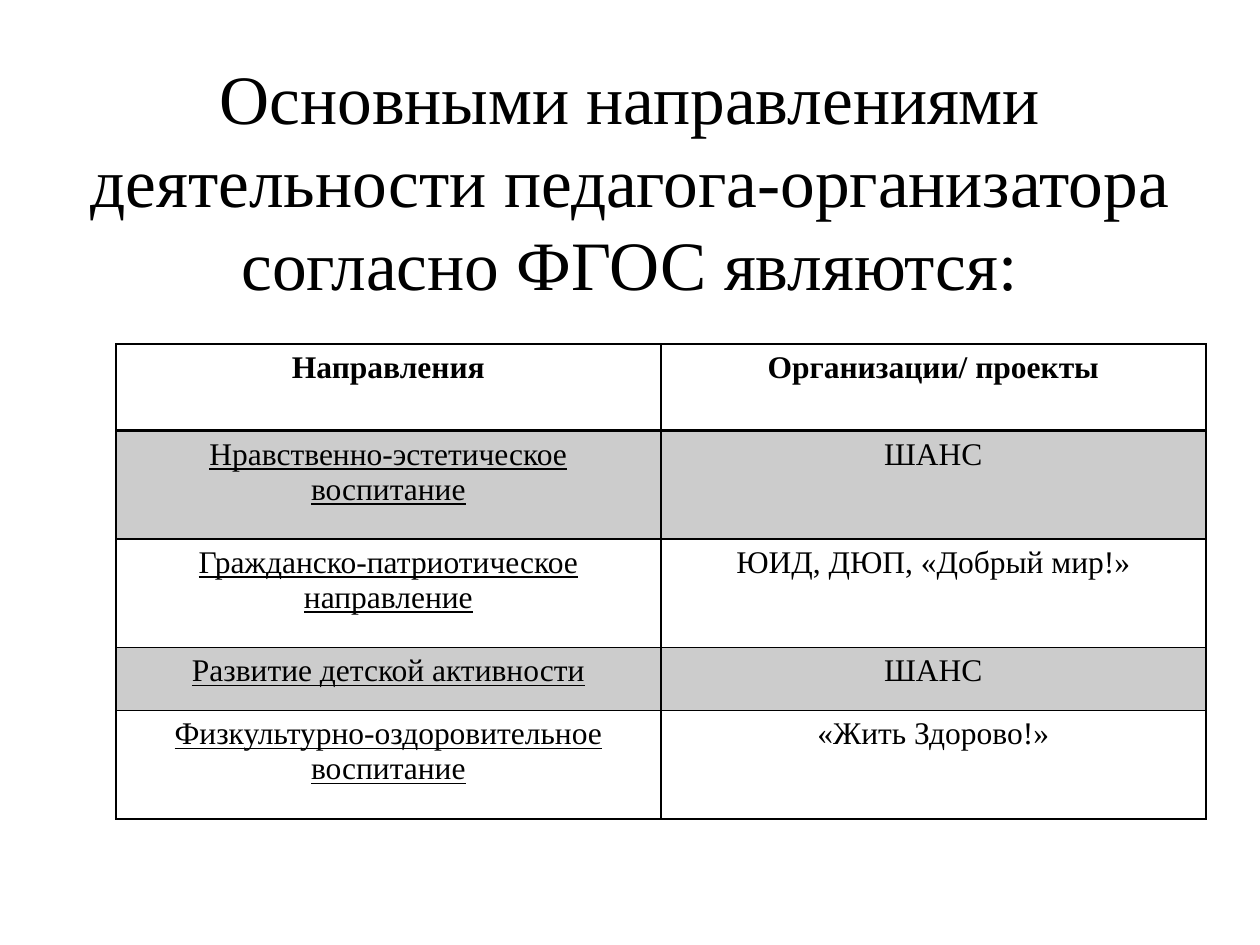
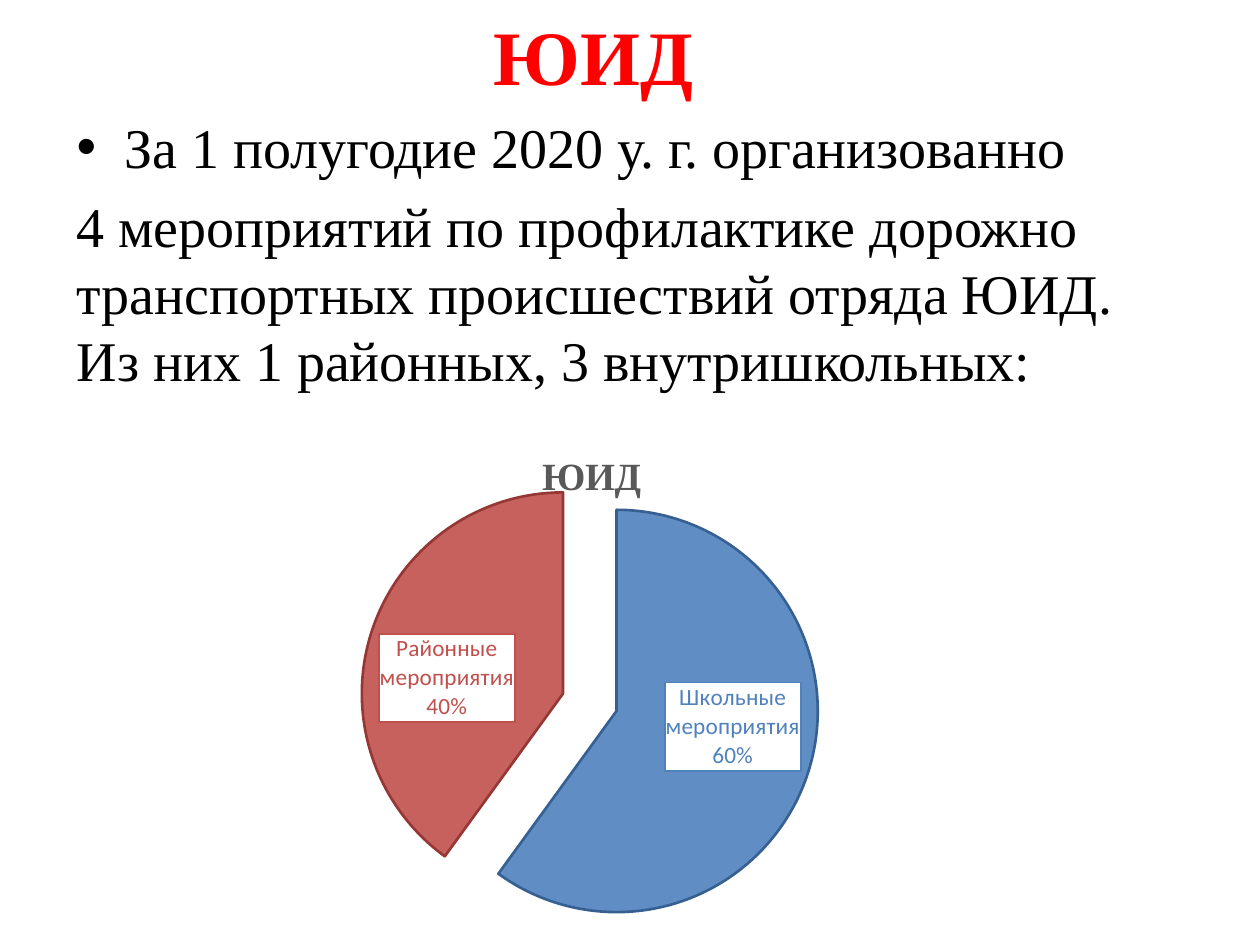
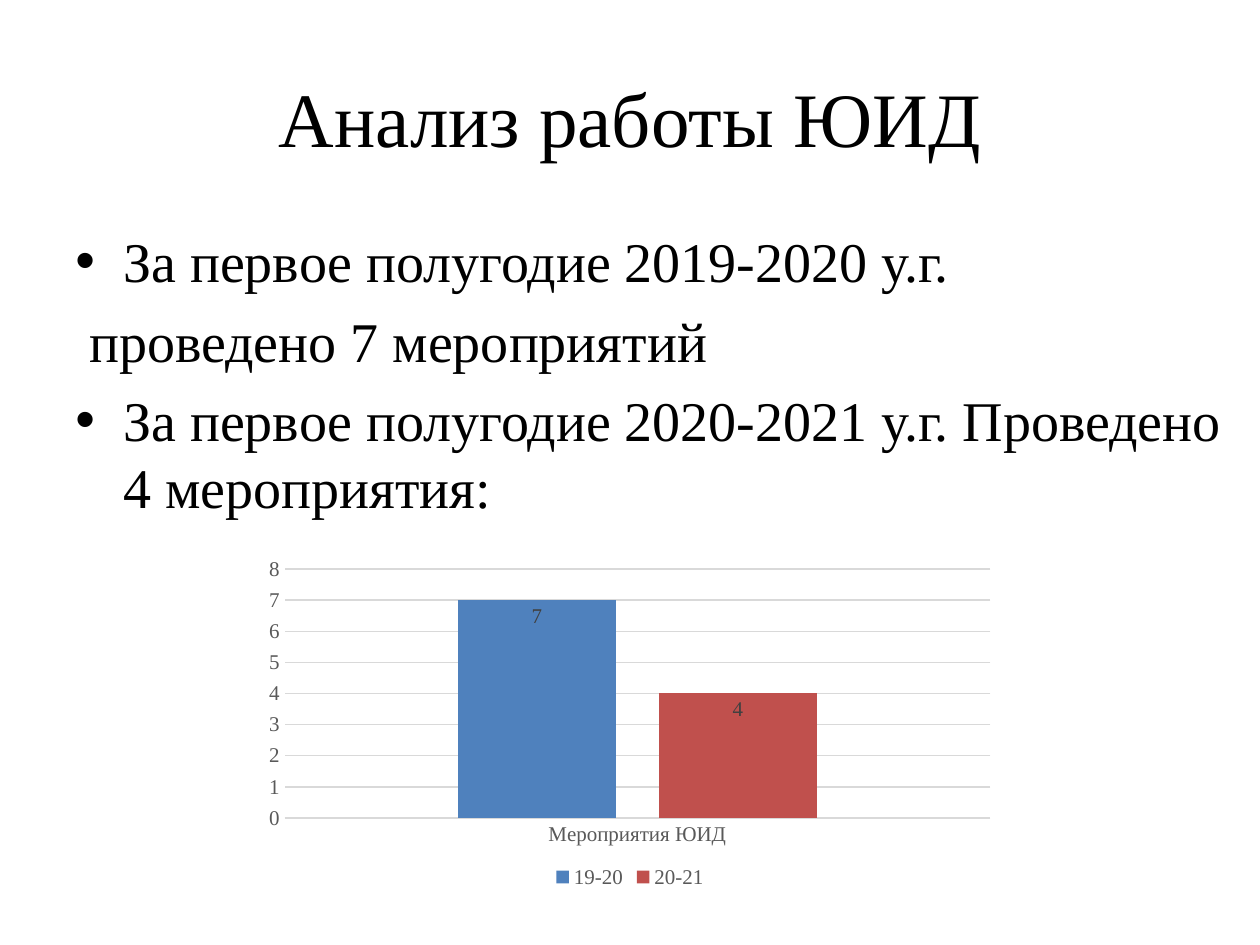
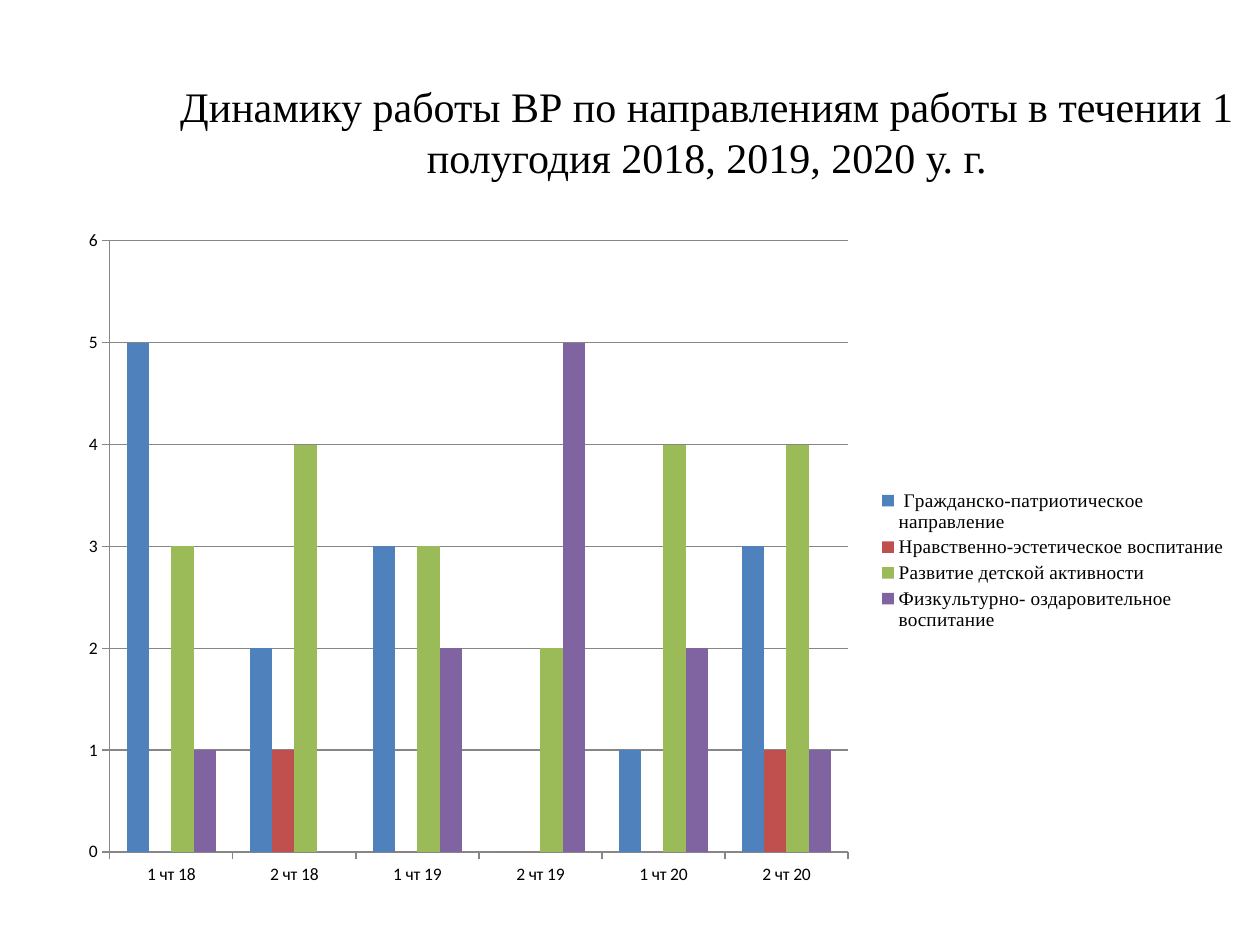
from pptx import Presentation
from pptx import util as u
from pptx.chart.data import CategoryChartData
from pptx.dml.color import RGBColor
from pptx.enum import chart as ch, text
from pptx.oxml import parse_xml
from pptx.oxml.ns import nsdecls, qn

COLORS = {
    "black": "000000", "red": "FF0000", "white": "FFFFFF",
    "blue_bar": "4F81BD", "red_bar": "C0504D", "green_bar": "9BBB59", "violet_bar": "8064A2",
    "blue_edge": "366092", "red_edge": "953735",
    "label": "404040", "muted": "595959", "pale_line": "D9D9D9", "axis_line": "868686",
}
SERIF, SANS = "Times New Roman", "Calibri"
BULLET_INDENT = 0.38
CENTER = text.PP_ALIGN.CENTER


def rgb(name):
    return RGBColor.from_string(COLORS[name])


def style_font(font, color="black", **values):
    for name, value in {"name": SERIF, **values}.items():
        setattr(font, name, u.Pt(value) if name == "size" else value)
    font.color.rgb = rgb(color)


def style_line(line, color, width):
    line.color.rgb = rgb(color)
    line.width = u.Pt(width)


def set_opacity(element, percent):
    """Make the first solid colour under element partly transparent."""
    color = next(element.iter(qn("a:srgbClr")))
    color.append(parse_xml(f'<a:alpha {nsdecls("a")} val="{percent * 1000}"/>'))


def add_text_box(slide, place):
    frame = slide.shapes.add_textbox(*map(u.Inches, place)).text_frame
    frame.word_wrap = True
    return frame


def add_title(slide, wording, place, size=44, bottom=0.05, **font):
    frame = add_text_box(slide, place)
    frame.vertical_anchor = text.MSO_ANCHOR.MIDDLE
    frame.margin_bottom = u.Inches(bottom)
    para = frame.paragraphs[0]
    para.alignment = CENTER
    span = para.add_run()
    span.text = wording
    style_font(span.font, size=size, **font)


def add_body(slide, lines, place):
    """Add paragraphs from (wording, indent) pairs; indent None gives a bullet."""
    frame = add_text_box(slide, place)
    for number, (wording, indent) in enumerate(lines):
        para = frame.paragraphs[0] if number == 0 else frame.add_paragraph()
        if number:
            para.space_before = u.Pt(7)
        props = para._p.get_or_add_pPr()
        margin = u.Inches(BULLET_INDENT if indent is None else indent)
        props.set("marL", str(margin))
        if indent is None:
            props.set("indent", str(-margin))
            props.append(parse_xml(f'<a:buFont {nsdecls("a")} typeface="Arial"/>'))
            props.append(parse_xml(f'<a:buChar {nsdecls("a")} char="•"/>'))
        span = para.add_run()
        span.text = wording
        style_font(span.font, size=32)


def add_cell_borders(cell, widths):
    props = cell._tc.get_or_add_tcPr()
    for side in "LRTB":
        props.append(parse_xml(
            f'<a:ln{side} {nsdecls("a")} w="{u.Pt(widths.get(side, 1))}"><a:solidFill>'
            f'<a:srgbClr val="{COLORS["black"]}"/></a:solidFill></a:ln{side}>'))


def add_directions_table(slide, rows, heights, place):
    table = slide.shapes.add_table(len(rows), 2, *map(u.Inches, place)).table
    table.first_row = table.horz_banding = False
    for row, height in zip(table.rows, heights):
        row.height = u.Inches(height)
    for r, row in enumerate(rows):
        for c, wording in enumerate(row):
            cell = table.cell(r, c)
            add_cell_borders(cell, {0: {"B": 2}, 1: {"T": 2}}.get(r, {}))
            if r % 2:
                cell.fill.solid()
                cell.fill.fore_color.rgb = rgb("black")
                set_opacity(cell._tc.tcPr.find(qn("a:solidFill")), 20)
            else:
                cell.fill.background()
            para = cell.text_frame.paragraphs[0]
            para.alignment = CENTER
            span = para.add_run()
            span.text = wording
            style_font(span.font, size=18, bold=r == 0, underline=r > 0 and c == 0)


def set_layout(parent, index, inner=False, **edges):
    """Give a chart part a manual place, in fractions of the chart."""
    for old in parent.findall(qn("c:layout")):
        parent.remove(old)
    target = '<c:layoutTarget val="inner"/>' if inner else ""
    modes = '<c:xMode val="edge"/><c:yMode val="edge"/>'
    sizes = "".join(f'<c:{name} val="{value}"/>' for name, value in edges.items())
    parent.insert(index, parse_xml(
        f'<c:layout {nsdecls("c")}><c:manualLayout>{target}{modes}{sizes}'
        '</c:manualLayout></c:layout>'))


def add_chart(slide, kind, categories, series, place, plot_place, font):
    data = CategoryChartData()
    data.categories = categories
    for name, values, *_ in series:
        data.add_series(name, values)
    chart = slide.shapes.add_chart(kind, *map(u.Inches, place), data).chart
    style_font(chart.font, name=font, size=10)
    chart.has_title = chart.has_legend = False
    area = next(chart._chartSpace.iter(qn("c:plotArea")))
    set_layout(area, 0, inner=True, **dict(zip("xywh", plot_place)))
    return chart


def add_pie(slide, title, slices, place):
    chart = add_chart(slide, ch.XL_CHART_TYPE.PIE, [s[0] for s in slices],
                      [("Series 1", [s[1] for s in slices])], place,
                      (0.02, 0.1, 0.95, 0.82), SANS)
    chart.has_title = True
    span = chart.chart_title.text_frame.paragraphs[0].add_run()
    span.text = title
    style_font(span.font, "muted", size=22, bold=True)
    set_layout(chart.chart_title._element, 1, x=0.43, y=0.05)

    plot = chart.plots[0]
    plot.vary_by_categories = True
    pie = plot.series[0]
    for number, (_, _, color, edge) in enumerate(slices):
        point = pie.points[number]
        point.format.fill.solid()
        point.format.fill.fore_color.rgb = rgb(color)
        style_line(point.format.line, edge, 1.5)
        style_font(point.data_label.font, color, name=SANS, size=13.3)
        point.data_label.position = ch.XL_LABEL_POSITION.INSIDE_END
    for piece in pie._element.findall(qn("c:dPt")):
        set_opacity(piece, 90)
    pie._element.find(qn("c:dPt")).addprevious(
        parse_xml(f'<c:explosion {nsdecls("c")} val="14"/>'))
    for label, (_, _, color, _) in zip(pie._element.iter(qn("c:dLbl")), slices):
        for flag, shown in {"showVal": 0, "showCatName": 1, "showPercent": 1}.items():
            label.find(qn(f"c:{flag}")).set("val", str(shown))
        label.find(qn("c:txPr")).addprevious(parse_xml(
            f'<c:spPr {nsdecls("c", "a")}><a:solidFill><a:srgbClr val="{COLORS["white"]}"/>'
            f'</a:solidFill><a:ln w="{u.Pt(1)}"><a:solidFill>'
            f'<a:srgbClr val="{COLORS[color]}"/></a:solidFill></a:ln></c:spPr>'))
        label.append(parse_xml(f'<c:separator {nsdecls("c")}>\n</c:separator>'))


def add_columns(slide, categories, series, place, plot_place, *, top, gap, overlap, font,
                size, color, line, tick, legend_side, legend_size):
    """Add clustered columns from (name, values, colour) series."""
    chart = add_chart(slide, ch.XL_CHART_TYPE.COLUMN_CLUSTERED, categories, series,
                      place, plot_place, font)
    plot = chart.plots[0]
    plot.vary_by_categories = False
    plot.gap_width, plot.overlap = gap, overlap
    for bars, (_, _, bar_color) in zip(plot.series, series):
        bars.format.fill.solid()
        bars.format.fill.fore_color.rgb = rgb(bar_color)
        bars.invert_if_negative = False
    for axis in (chart.category_axis, chart.value_axis):
        axis.major_tick_mark = tick
        axis.minor_tick_mark = ch.XL_TICK_MARK.NONE
        style_font(axis.tick_labels.font, color, name=font, size=size)
        style_line(axis.format.line, line, 0.75)
    scale = chart.value_axis
    scale.minimum_scale, scale.maximum_scale, scale.major_unit = 0, top, 1
    scale.has_major_gridlines = True
    style_line(scale.major_gridlines.format.line, line, 0.75)
    chart.has_legend = True
    chart.legend.position = legend_side
    chart.legend.include_in_layout = False
    style_font(chart.legend.font, color, size=legend_size)
    return chart


def label_columns(chart):
    for bars in chart.plots[0].series:
        labels = bars.data_labels
        labels.show_value = True
        labels.position = ch.XL_LABEL_POSITION.INSIDE_END
        style_font(labels.font, "label", size=12)


def build_directions(slide):
    add_title(slide, "Основными направлениями деятельности педагога-организатора "
              "согласно ФГОС являются:", (0.5, 0, 9, 3.51), size=39.6, bottom=0.71)
    rows = [
        ("Направления", "Организации/ проекты"),
        ("Нравственно-эстетическое воспитание", "ШАНС"),
        ("Гражданско-патриотическое направление", "ЮИД, ДЮП, «Добрый мир!»"),
        ("Развитие детской активности", "ШАНС"),
        ("Физкультурно-оздоровительное воспитание", "«Жить Здорово!»"),
    ]
    add_directions_table(slide, rows, (0.69, 0.86, 0.86, 0.5, 0.86), (0.92, 2.73, 8.65, 3.78))


def build_half_year(slide):
    add_title(slide, "ЮИД", (0.21, -0.19, 9, 1.25), color="red", bold=True)
    add_body(slide, [
        ("За 1 полугодие 2020 у. г. организованно", None),
        ("4 мероприятий по профилактике дорожно транспортных происшествий отряда ЮИД. "
         "Из них 1 районных, 3 внутришкольных:", 0),
    ], (0.51, 0.84, 9, 4.95))
    add_pie(slide, "ЮИД", [
        ("Школьные мероприятия", 60, "blue_bar", "blue_edge"),
        ("Районные мероприятия", 40, "red_bar", "red_edge"),
    ], (1.38, 3.31, 6.67, 4.44))


def build_analysis(slide):
    add_title(slide, "Анализ работы ЮИД", (0.5, 0.3, 9, 1.25))
    add_body(slide, [
        ("За первое полугодие 2019-2020 у.г.", None),
        ("проведено 7 мероприятий", 0.11),
        ("За первое полугодие 2020-2021 у.г. Проведено 4 мероприятия:", None),
    ], (0.5, 1.75, 9.38, 4.95))
    chart = add_columns(
        slide, ["Мероприятия ЮИД"],
        [("19-20", [7], "blue_bar"), ("20-21", [4], "red_bar")],
        (2.02, 4.38, 5.96, 2.71), (0.04, 0.05, 0.94, 0.73),
        top=8, gap=219, overlap=-27, font=SERIF, size=12, color="muted", line="pale_line",
        tick=ch.XL_TICK_MARK.NONE, legend_side=ch.XL_LEGEND_POSITION.BOTTOM, legend_size=12)
    chart.value_axis.format.line.fill.background()
    label_columns(chart)


def build_dynamics(slide):
    add_title(slide, "Динамику работы ВР по направлениям работы в течении 1 полугодия "
              "2018, 2019, 2020 у. г.", (1.22, 0.3, 8.78, 1.48), size=24)
    quarters = [f"{quarter} чт {year}" for year in (18, 19, 20) for quarter in (1, 2)]
    chart = add_columns(
        slide, quarters, [
            (" Гражданско-патриотическое направление", [5, 2, 3, 0, 1, 3], "blue_bar"),
            ("Нравственно-эстетическое воспитание", [None, 1, 0, 0, None, 1], "red_bar"),
            ("Развитие детской активности", [3, 4, 3, 2, 4, 4], "green_bar"),
            ("Физкультурно- оздаровительное воспитание", [1, None, 2, 5, 2, 1], "violet_bar"),
        ], (0.5, 1.75, 9.3, 5.39), (0.04, 0.03, 0.63, 0.9),
        top=6, gap=150, overlap=0, font=SANS, size=10, color="black", line="axis_line",
        tick=ch.XL_TICK_MARK.OUTSIDE, legend_side=ch.XL_LEGEND_POSITION.RIGHT, legend_size=11)
    set_layout(chart.legend._element, 1, x=0.69, y=0.39, w=0.31, h=0.22)


def main():
    deck = Presentation()
    deck.slide_width, deck.slide_height = u.Inches(10), u.Inches(7.5)
    for build in (build_directions, build_half_year, build_analysis, build_dynamics):
        build(deck.slides.add_slide(deck.slide_layouts[6]))
    deck.save("out.pptx")


if __name__ == "__main__":
    main()
